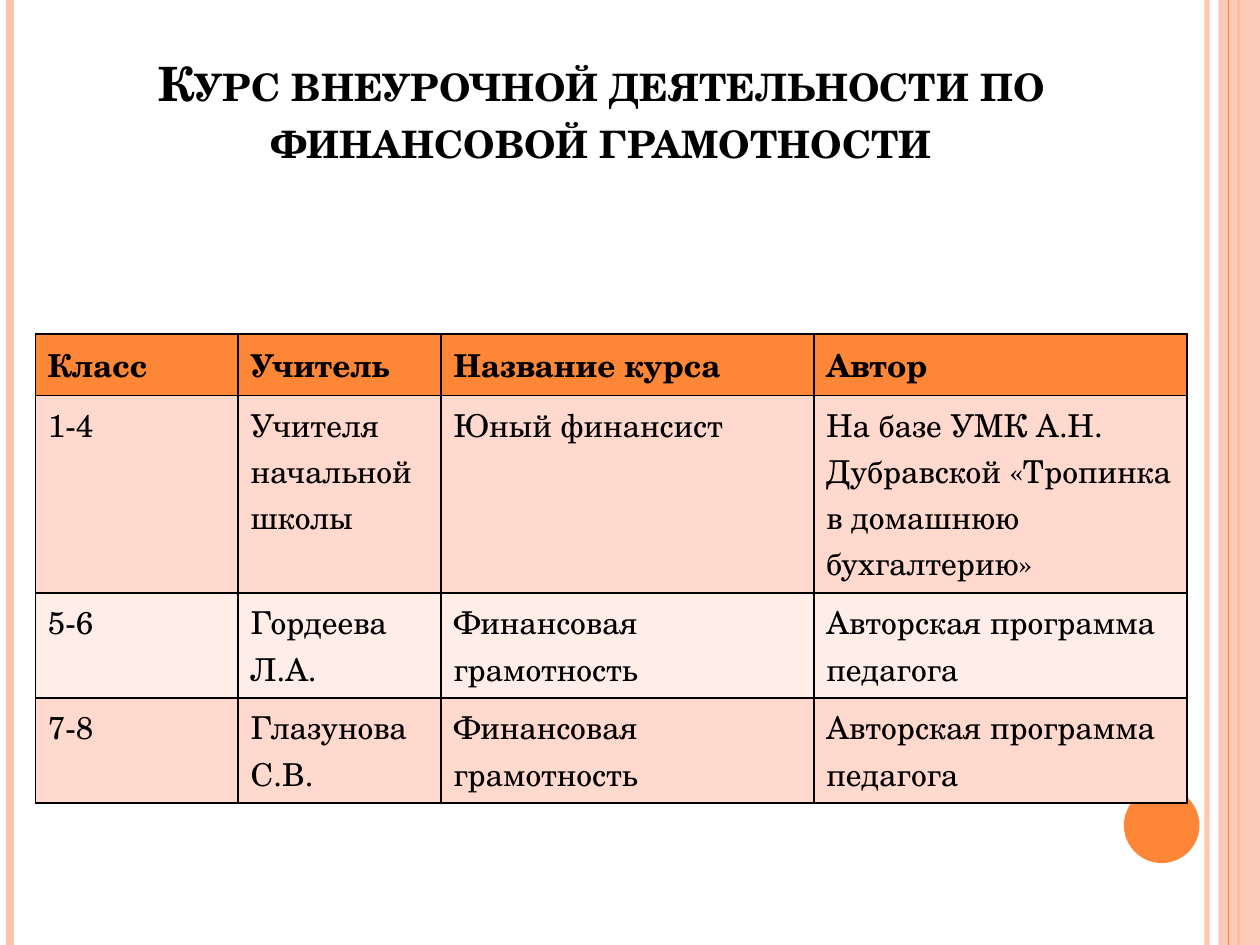
"""Build a slide with a table of financial literacy courses by school grade."""
from dataclasses import dataclass

from lxml import etree
from pptx import Presentation
from pptx.dml.color import RGBColor
from pptx.enum.shapes import MSO_CONNECTOR, MSO_SHAPE
from pptx.enum.text import MSO_ANCHOR, MSO_AUTO_SIZE, PP_ALIGN
from pptx.oxml.ns import qn
from pptx.shapes.autoshape import Shape
from pptx.slide import Slide
from pptx.table import _Cell
from pptx.text.text import _Paragraph
from pptx.util import Inches, Pt

STRAIGHT = MSO_CONNECTOR.STRAIGHT
RECTANGLE, OVAL = MSO_SHAPE.RECTANGLE, MSO_SHAPE.OVAL
CENTER, BOTTOM = PP_ALIGN.CENTER, MSO_ANCHOR.BOTTOM
NO_AUTOFIT = MSO_AUTO_SIZE.NONE
FONT = "TeX Gyre Schola"
WIDTH, HEIGHT = 10, 7.5
COLORS = {
    "orange": "FE8637",
    "peach": "FEC3AE",
    "band_dark": "FFD9CE",
    "band_light": "FFEDE8",
    "black": "000000",
}


@dataclass
class Stripe:
    x: float
    color: str
    weight: float
    opacity: int = 100


@dataclass
class Ornament:
    kind: MSO_SHAPE
    box: tuple[float, float, float, float]
    color: str
    opacity: int = 100


OUTER_STRIPES = [Stripe(9.58, "peach", 3, 93), Stripe(0.08, "peach", 4.5),
                 Stripe(9.83, "orange", 1.5)]
BAND = Ornament(RECTANGLE, (9.67, 0, 0.33, HEIGHT), "peach", 87)
INNER_STRIPE = Stripe(9.75, "orange", 0.75)
DISC = Ornament(OVAL, (8.92, 6.25, 0.6, 0.6), "orange")

TITLE = "Курс внеурочной деятельности по финансовой грамотности"
COLUMN_WIDTHS = [1.61, 1.61, 2.96, 2.96]
ROW_HEIGHT = 0.41
ROWS = [
    ("Класс", "Учитель", "Название курса", "Автор"),
    ("1-4", "Учителя начальной школы", "Юный финансист",
     "На базе УМК А.Н. Дубравской «Тропинка в домашнюю бухгалтерию»"),
    ("5-6", "Гордеева Л.А.", "Финансовая грамотность",
     "Авторская программа педагога"),
    ("7-8", "Глазунова С.В.", "Финансовая грамотность",
     "Авторская программа педагога"),
]
ROW_FILLS = ["orange", "band_dark", "band_light", "band_dark"]


def rgb(name: str) -> RGBColor:
    return RGBColor.from_string(COLORS[name])


def set_opacity(element: etree._Element, percent: int) -> None:
    if percent < 100:
        color = next(element.iter(qn("a:srgbClr")))
        etree.SubElement(color, qn("a:alpha"), val=str(percent * 1000))


def format_paragraph(p: _Paragraph, size: float, bold: bool) -> None:
    p.font.name = FONT
    p.font.size = Pt(size)
    p.font.bold = bold
    p.font.color.rgb = rgb("black")


def draw_stripe(s: Slide, stripe: Stripe) -> None:
    x = Inches(stripe.x)
    line = s.shapes.add_connector(STRAIGHT, x, 0, x, Inches(HEIGHT))
    line.line.color.rgb = rgb(stripe.color)
    line.line.width = Pt(stripe.weight)
    sp_pr = line._element.spPr
    set_opacity(sp_pr, stripe.opacity)
    etree.SubElement(sp_pr, qn("a:effectLst"))


def draw_ornament(s: Slide, ornament: Ornament) -> Shape:
    sp = s.shapes.add_shape(ornament.kind, *map(Inches, ornament.box))
    sp.shadow.inherit = False
    sp.fill.solid()
    sp.fill.fore_color.rgb = rgb(ornament.color)
    sp.line.fill.background()
    set_opacity(sp._element.spPr, ornament.opacity)
    return sp


def write_title(s: Slide) -> None:
    sp = s.shapes.title
    sp.left, sp.top, sp.width, sp.height = map(Inches, (0.8, 0.74, 7.95, 0.64))
    tf = sp.text_frame
    tf.auto_size = NO_AUTOFIT
    tf.word_wrap = True
    tf.vertical_anchor = BOTTOM
    p = tf.paragraphs[0]
    p.alignment = CENTER
    format_paragraph(p, 27, True)
    r = p.add_run()
    r.text = TITLE
    r._r.get_or_add_rPr().set("cap", "small")


def add_borders(cell: _Cell) -> None:
    tc_pr = cell._tc.get_or_add_tcPr()
    for index, side in enumerate(("lnL", "lnR", "lnT", "lnB")):
        ln = etree.Element(qn(f"a:{side}"), w=str(Pt(1)))
        fill = etree.SubElement(ln, qn("a:solidFill"))
        etree.SubElement(fill, qn("a:srgbClr"), val=COLORS["black"])
        tc_pr.insert(index, ln)


def draw_table(s: Slide) -> None:
    frame = s.shapes.add_table(
        len(ROWS), len(COLUMN_WIDTHS), Inches(0.28), Inches(2.65),
        Inches(sum(COLUMN_WIDTHS)), Inches(ROW_HEIGHT * len(ROWS)))
    table = frame.table
    table.first_row = False
    table.horz_banding = False
    for column, width in zip(table.columns, COLUMN_WIDTHS):
        column.width = Inches(width)
    for i, (row, texts, fill) in enumerate(zip(table.rows, ROWS, ROW_FILLS)):
        row.height = Inches(ROW_HEIGHT)
        for cell, text in zip(row.cells, texts):
            cell.text = text
            cell.fill.solid()
            cell.fill.fore_color.rgb = rgb(fill)
            format_paragraph(cell.text_frame.paragraphs[0], 18, i == 0)
            add_borders(cell)


def main() -> None:
    prs = Presentation()
    prs.slide_width, prs.slide_height = Inches(WIDTH), Inches(HEIGHT)
    s = prs.slides.add_slide(prs.slide_layouts[5])
    for stripe in OUTER_STRIPES:
        draw_stripe(s, stripe)
    draw_ornament(s, BAND)
    draw_stripe(s, INNER_STRIPE)
    draw_ornament(s, DISC)
    write_title(s)
    draw_table(s)
    prs.save("out.pptx")


if __name__ == "__main__":
    main()
